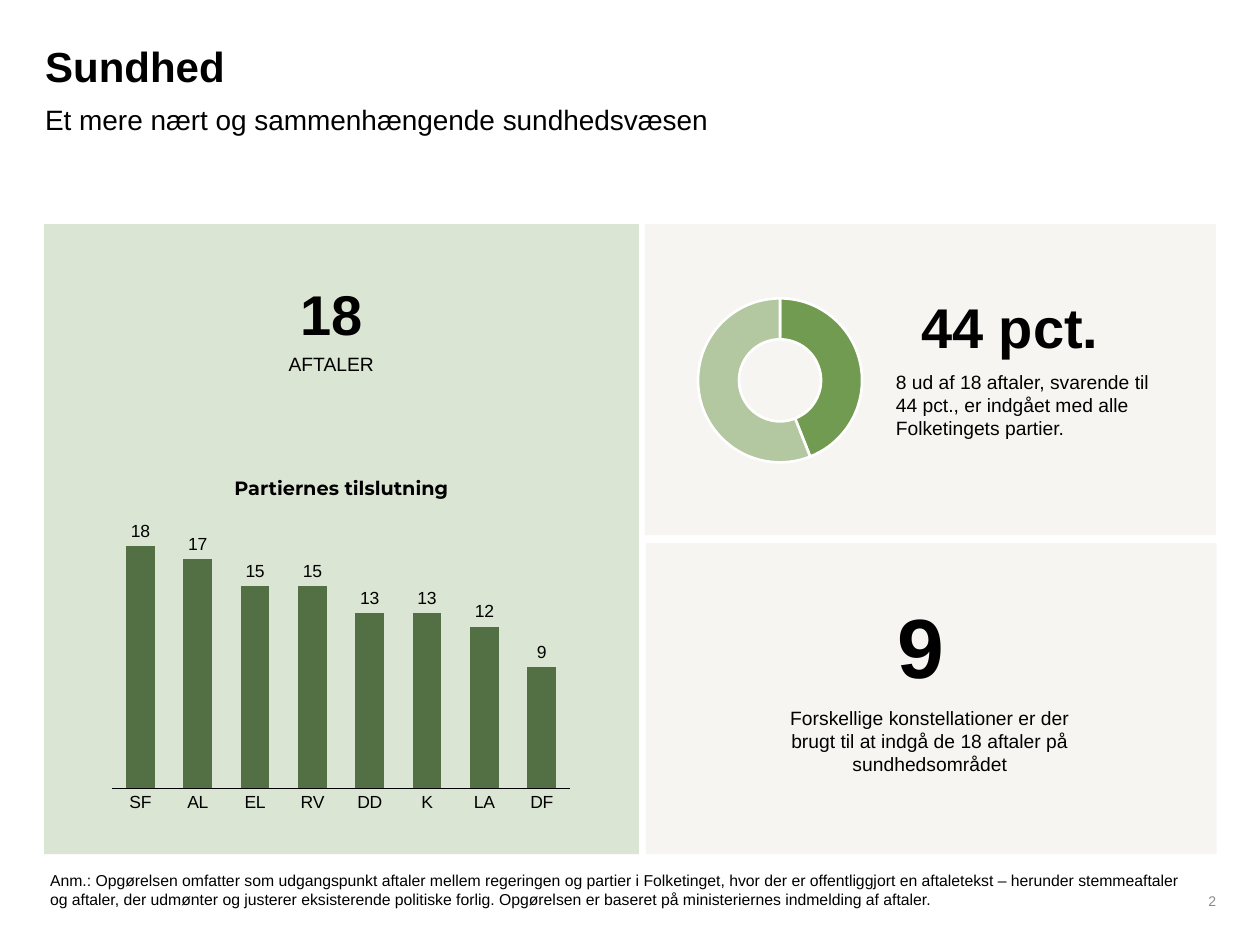
from lxml.etree import SubElement
from pptx import Presentation
from pptx.chart.data import CategoryChartData
from pptx.dml.color import RGBColor
from pptx.enum.chart import XL_CHART_TYPE, XL_LABEL_POSITION, XL_TICK_MARK
from pptx.enum.shapes import MSO_SHAPE
from pptx.enum.text import MSO_ANCHOR, MSO_AUTO_SIZE, PP_ALIGN
from pptx.oxml import parse_xml
from pptx.oxml.ns import nsdecls, qn
from pptx.util import Cm, Pt

BLACK, GREY, WHITE = "000000", "8C8C8C", "FFFFFF"
GREEN, DARK_GREEN, SAND = "719B50", "537044", "F6F5F2"
LEFT, CENTER, RIGHT = PP_ALIGN.LEFT, PP_ALIGN.CENTER, PP_ALIGN.RIGHT


def color(value):
    return RGBColor.from_string(value)


def paint(fill, value, opacity=100):
    fill.solid()
    fill.fore_color.rgb = color(value)
    if opacity < 100:
        # The solid fill's colour element carries the transparency
        for tone in fill._xPr.iter(qn("a:srgbClr")):
            SubElement(tone, qn("a:alpha")).set("val", str(opacity * 1000))


class SlideBuilder:
    font = "Arial"

    def __init__(self, deck):
        self.page = deck.slides.add_slide(deck.slide_layouts[1])

    def style(self, font, size, bold=False, tone=BLACK, name=None):
        font.name = name or self.font
        font.size = Pt(size)
        font.bold = bold
        font.color.rgb = color(tone)

    def add_span(self, para, text, size, bold=False, tone=BLACK, name=None):
        span = para.add_run()
        span.text = text
        self.style(span.font, size, bold, tone, name)

    def frame(self, box, anchor=MSO_ANCHOR.TOP, inset=(0, 0), grow=False):
        frame = box.text_frame
        frame.word_wrap = True
        frame.vertical_anchor = anchor
        frame.auto_size = MSO_AUTO_SIZE.SHAPE_TO_FIT_TEXT if grow else MSO_AUTO_SIZE.NONE
        frame.margin_left = frame.margin_right = Cm(inset[0])
        frame.margin_top = frame.margin_bottom = Cm(inset[1])
        return frame

    def placeholder(self, index, place, text, size, bold=False, anchor=MSO_ANCHOR.TOP):
        box = self.page.placeholders[index]
        box.left, box.top, box.width, box.height = map(Cm, place)
        para = self.frame(box, anchor).paragraphs[0]
        properties = para._p.get_or_add_pPr()
        properties.set("marL", "0")
        properties.set("indent", "0")
        SubElement(properties, qn("a:buNone"))
        para.alignment = LEFT
        para.line_spacing = 0.9
        para.space_before = Pt(0)
        self.add_span(para, text, size, bold)

    def text(self, place, paragraphs, align=LEFT, after=0, **frame_options):
        """Each paragraph is a list of spans: (text, size, bold, tone, font)."""
        box = self.page.shapes.add_textbox(*map(Cm, place))
        frame = self.frame(box, **frame_options)
        for number, spans in enumerate(paragraphs):
            para = frame.add_paragraph() if number else frame.paragraphs[0]
            para.alignment = align
            para.space_after = Pt(after)
            for span in spans:
                self.add_span(para, *span)

    def panel(self, place, tone, opacity=100):
        box = self.page.shapes.add_shape(MSO_SHAPE.RECTANGLE, *map(Cm, place))
        box.shadow.inherit = False
        paint(box.fill, tone, opacity)
        box.line.fill.background()

    def chart(self, kind, place, categories, values, plot_place):
        data = CategoryChartData()
        data.categories = categories
        data.add_series("Series 1", values)
        chart = self.page.shapes.add_chart(kind, *map(Cm, place), data).chart
        chart.has_legend = False
        chart.has_title = False
        self.style(chart.font, 10)
        # Fixed inner plot area, as fractions of the chart
        area = chart._chartSpace.find(".//" + qn("c:plotArea"))
        for old in area.findall(qn("c:layout")):
            area.remove(old)
        sides = "".join(f'<c:{side} val="{value}"/>' for side, value in zip("xywh", plot_place))
        area.insert(0, parse_xml(
            f'<c:layout {nsdecls("c")}><c:manualLayout><c:layoutTarget val="inner"/>'
            f'<c:xMode val="edge"/><c:yMode val="edge"/>{sides}</c:manualLayout></c:layout>'))
        return chart

    def doughnut(self, place, values, opacities):
        chart = self.chart(XL_CHART_TYPE.DOUGHNUT, place, ["1", "2", "3"], values,
                           (0.08, 0.06, 0.88, 0.89))
        plot = chart.plots[0]
        plot.has_data_labels = False
        plot._element.find(qn("c:holeSize")).set("val", "61")
        for number, opacity in enumerate(opacities):
            slice_format = plot.series[0].points[number].format
            paint(slice_format.fill, GREEN, opacity)
            slice_format.line.color.rgb = color(WHITE)
            slice_format.line.width = Pt(1.5)

    def columns(self, place, votes):
        chart = self.chart(XL_CHART_TYPE.COLUMN_CLUSTERED, place, list(votes), list(votes.values()),
                           (0.02, 0.02, 0.96, 0.88))
        plot = chart.plots[0]
        plot.vary_by_categories = False
        plot.gap_width = 100
        paint(plot.series[0].format.fill, DARK_GREEN)
        plot.has_data_labels = True
        labels = plot.data_labels
        labels.show_value = True
        labels.position = XL_LABEL_POSITION.OUTSIDE_END
        self.style(labels.font, 10)
        scale = chart.value_axis
        scale.minimum_scale, scale.maximum_scale = 0, 20
        scale.has_major_gridlines = False
        scale.visible = False
        axis = chart.category_axis
        axis.major_tick_mark = axis.minor_tick_mark = XL_TICK_MARK.NONE
        axis.format.line.color.rgb = color(BLACK)
        axis.format.line.width = Pt(0.75)
        self.style(axis.tick_labels.font, 10)


def main():
    deck = Presentation()
    deck.slide_width, deck.slide_height = Cm(25.4), Cm(19.05)
    slide = SlideBuilder(deck)

    # Heading
    slide.placeholder(0, (0.91, 0.94, 19.99, 0.99), "Sundhed", 24, bold=True)
    slide.placeholder(1, (0.91, 2.06, 23.04, 0.79),
                      "Et mere nært og sammenhængende sundhedsvæsen", 16, anchor=MSO_ANCHOR.MIDDLE)

    # Panels
    slide.panel((0.89, 4.52, 11.99, 12.7), GREEN, 25)
    slide.panel((13.02, 10.95, 11.51, 6.27), SAND)
    slide.panel((13, 4.52, 11.51, 6.27), SAND)

    # Agreements and party support
    slide.text((5.16, 5.64, 3.05, 1.37), [[("18", 32, True)]], CENTER, grow=True)
    slide.text((4.8, 7.11, 3.76, 0.48), [[("AFTALER", 11)]], CENTER, grow=True)
    slide.text((3.2, 9.58, 7.37, 0.48),
               [[("Partiernes tilslutning", 11, True, BLACK, "Montserrat")]],
               CENTER, anchor=MSO_ANCHOR.BOTTOM, grow=True)
    slide.columns((2.06, 10.34, 9.63, 6.17), {
        "SF": 18, "AL": 17, "EL": 15, "RV": 15, "DD": 13, "K": 13, "LA": 12, "DF": 9})

    # Share agreed with all parties
    slide.doughnut((13.77, 5.23, 3.76, 4.83), [44, 56, None], [100, 50])
    slide.text((17.58, 5.64, 5.56, 2.69), [[("44 pct.", 32, True)]],
               CENTER, after=6, inset=(0.25, 0.25))
    slide.text((18.06, 7.47, 5.23, 1.42), [[(
        "8 ud af 18 aftaler, svarende til 44 pct., er indgået med alle Folketingets partier.", 11)]],
        grow=True)

    # Constellations
    slide.text((15.62, 11.86, 6.25, 3.94), [
        [("9", 48, True), (" ", 36)],
        [("Forskellige konstellationer er der brugt til at indgå de 18 aftaler på sundhedsområdet", 11)],
    ], CENTER, after=6, inset=(0.25, 0.13), grow=True)

    # Note and page number
    slide.text((0.76, 17.42, 23.5, 1.02), [[(
        "Anm.: Opgørelsen omfatter som udgangspunkt aftaler mellem regeringen og partier i Folketinget, "
        "hvor der er offentliggjort en aftaletekst – herunder stemmeaftaler og aftaler, der udmønter og "
        "justerer eksisterende politiske forlig. Opgørelsen er baseret på ministeriernes indmelding af "
        "aftaler.", 9)]], inset=(0.25, 0.13), grow=True)
    slide.text((18.8, 17.65, 5.72, 1.02), [[("2", 8, False, GREY)]], RIGHT, anchor=MSO_ANCHOR.MIDDLE)

    deck.save("out.pptx")


if __name__ == "__main__":
    main()
